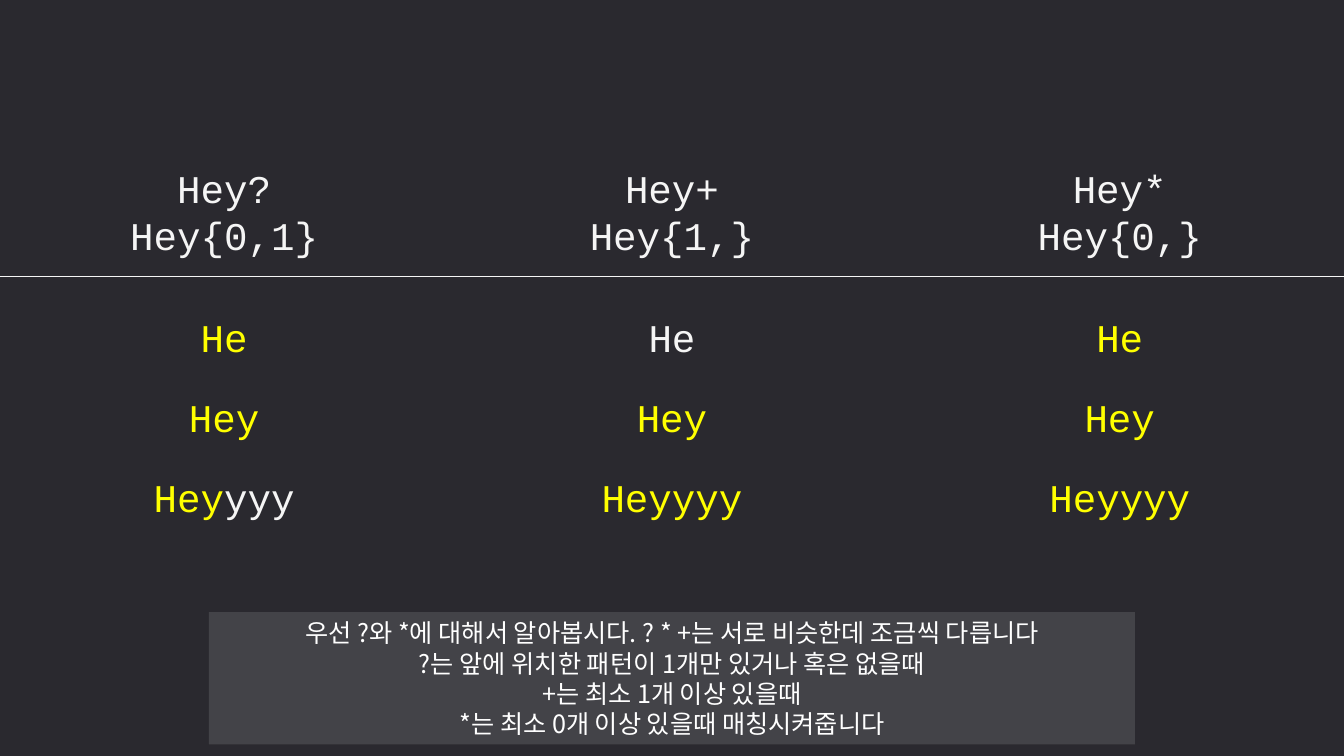
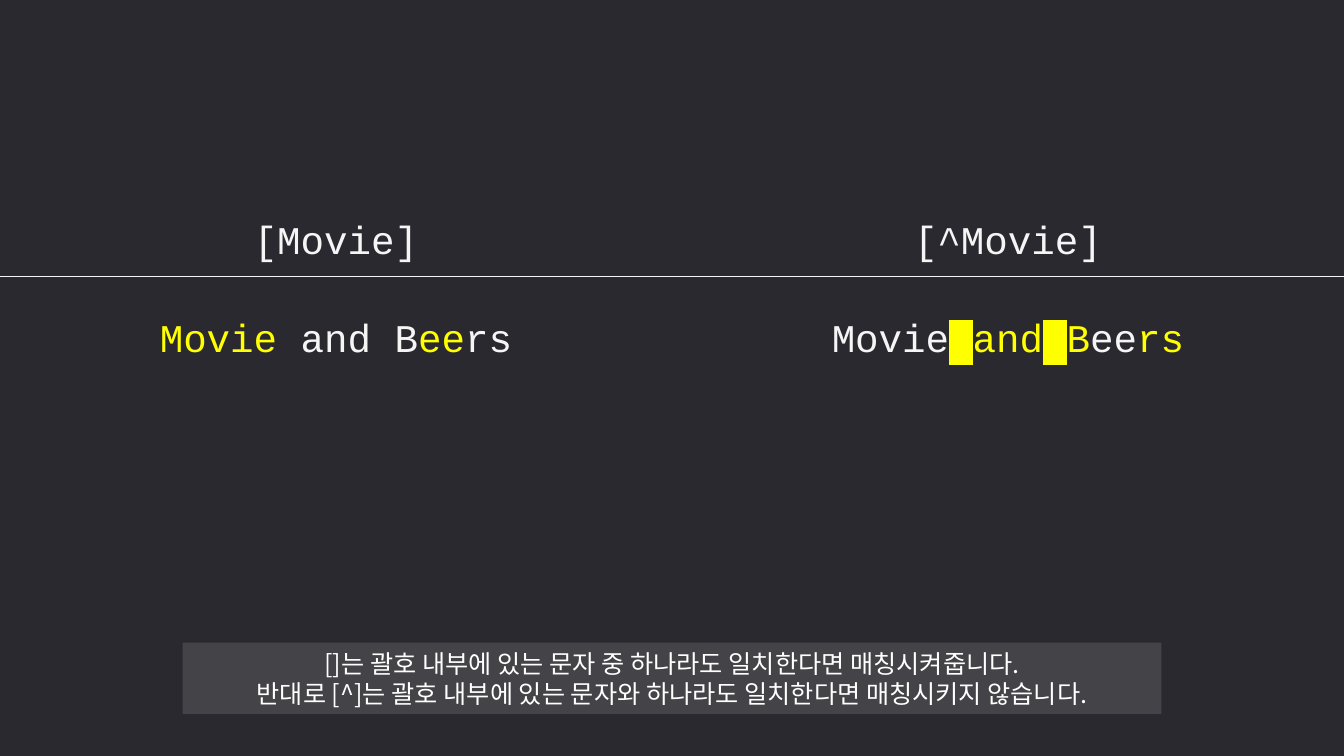
from dataclasses import dataclass

from lxml.etree import SubElement
from pptx import Presentation
from pptx.dml.color import RGBColor
from pptx.enum.shapes import MSO_CONNECTOR, MSO_SHAPE
from pptx.enum.text import MSO_ANCHOR, MSO_AUTO_SIZE, PP_ALIGN
from pptx.oxml.ns import qn
from pptx.util import Emu, Pt

COLORS = {"back": "2A292F", "plain": "F5F5F5", "match": "FFFF00", "caption": "FFFFFF"}
CODE_FONT, CAPTION_FONT = "Courier New", "Noto Sans CJK KR"
WIDTH, HEIGHT = 1280, 720
RULE_Y, FIRST_ROW_Y, ROW_STEP, ROW_H = 263, 294, 76, 55
CAPTION_ALPHA = 12


@dataclass(frozen=True)
class Span:
    text: str
    color: str = "plain"
    marked: bool = False


@dataclass(frozen=True)
class Column:
    heading: list[str]
    samples: list[list[Span]]


@dataclass(frozen=True)
class Caption:
    top: int
    width: int
    height: int
    lines: list[str]


@dataclass(frozen=True)
class Page:
    heading_y: int
    heading_h: int
    columns: list[Column]
    caption: Caption


def px(n: int) -> Emu:
    return Emu(n * 9525)


def rgb(name: str) -> RGBColor:
    return RGBColor.from_string(COLORS[name])


def hit(text: str) -> Span:
    return Span(text, "match")


def write(tf, lines: list[list[Span]], *, font: str, size: int,
          anchor=MSO_ANCHOR.TOP) -> None:
    tf.word_wrap = True
    tf.auto_size = MSO_AUTO_SIZE.SHAPE_TO_FIT_TEXT
    tf.vertical_anchor = anchor
    for i, spans in enumerate(lines):
        p = tf.add_paragraph() if i else tf.paragraphs[0]
        p.alignment = PP_ALIGN.CENTER
        for span in spans:
            r = p.add_run()
            r.text = span.text
            r.font.size = Pt(size)
            r.font.name = font
            r.font.color.rgb = rgb(span.color)
            props = r.font._element
            SubElement(props, qn("a:ea"), typeface=font)
            if span.marked:
                mark = SubElement(props, qn("a:highlight"))
                SubElement(mark, qn("a:srgbClr"), val=COLORS[span.color])
                props.find(qn("a:solidFill")).addnext(mark)


def add_code(s, x: int, y: int, w: int, h: int, lines: list[list[Span]]) -> None:
    box = s.shapes.add_textbox(px(x), px(y), px(w), px(h))
    write(box.text_frame, lines, font=CODE_FONT, size=28)


def add_rule(s) -> None:
    line = s.shapes.add_connector(
        MSO_CONNECTOR.STRAIGHT, 0, px(RULE_Y), px(WIDTH), px(RULE_Y))
    line.line.color.rgb = rgb("plain")
    line.line.width = Pt(0.5)
    SubElement(line._element.spPr, qn("a:effectLst"))


def add_caption(s, caption: Caption) -> None:
    left = (WIDTH - caption.width) // 2
    sp = s.shapes.add_shape(MSO_SHAPE.RECTANGLE, px(left), px(caption.top),
                            px(caption.width), px(caption.height))
    sp.shadow.inherit = False
    sp.fill.solid()
    sp.fill.fore_color.rgb = rgb("caption")
    color = sp._element.spPr.find(qn("a:solidFill")).find(qn("a:srgbClr"))
    SubElement(color, qn("a:alpha"), val=str(CAPTION_ALPHA * 1000))
    sp.line.fill.background()
    write(sp.text_frame, [[Span(t, "caption")] for t in caption.lines],
          font=CAPTION_FONT, size=18, anchor=MSO_ANCHOR.MIDDLE)


def add_page(prs, page: Page) -> None:
    s = prs.slides.add_slide(prs.slide_layouts[6])
    count = len(page.columns)
    edges = [round(WIDTH * i / count) for i in range(count + 1)]
    add_rule(s)
    for column, x, right in zip(page.columns, edges, edges[1:]):
        w = right - x
        add_code(s, x, page.heading_y, w, page.heading_h,
                 [[Span(t)] for t in column.heading])
        for row, spans in enumerate(column.samples):
            add_code(s, x, FIRST_ROW_Y + row * ROW_STEP, w, ROW_H, [spans])
    add_caption(s, page.caption)


PAGES = [
    Page(152, 100, [
        Column(["Hey?", "Hey{0,1}"],
               [[hit("He")], [hit("Hey")], [hit("Hey"), Span("yyy")]]),
        Column(["Hey+", "Hey{1,}"],
               [[Span("He")], [hit("Hey")], [hit("Heyyyy")]]),
        Column(["Hey*", "Hey{0,}"],
               [[hit("He")], [hit("Hey")], [hit("Heyyyy")]]),
    ], Caption(583, 882, 126, [
        "우선 ?와 *에 대해서 알아봅시다. ? * +는 서로 비슷한데 조금씩 다릅니다",
        "?는 앞에 위치한 패턴이 1개만 있거나 혹은 없을때",
        "+는 최소 1개 이상 있을때",
        "*는 최소 0개 이상 있을때 매칭시켜줍니다",
    ])),
    Page(200, ROW_H, [
        Column(["[Movie]"],
               [[hit("Movie"), Span(" and B"), hit("ee"), Span("rs")]]),
        Column(["[^Movie]"],
               [[Span("Movie"), Span(" ", "match", True), hit("and"),
                 Span(" ", "match", True), hit("B"), Span("ee"), hit("rs")]]),
    ], Caption(612, 932, 68, [
        "[]는 괄호 내부에 있는 문자 중 하나라도 일치한다면 매칭시켜줍니다.",
        "반대로 [^]는 괄호 내부에 있는 문자와 하나라도 일치한다면 매칭시키지 않습니다.",
    ])),
]


def main() -> None:
    prs = Presentation()
    prs.slide_width, prs.slide_height = px(WIDTH), px(HEIGHT)
    fill = prs.slide_master.background.fill
    fill.solid()
    fill.fore_color.rgb = rgb("back")
    for page in PAGES:
        add_page(prs, page)
    prs.save("out.pptx")


if __name__ == "__main__":
    main()
